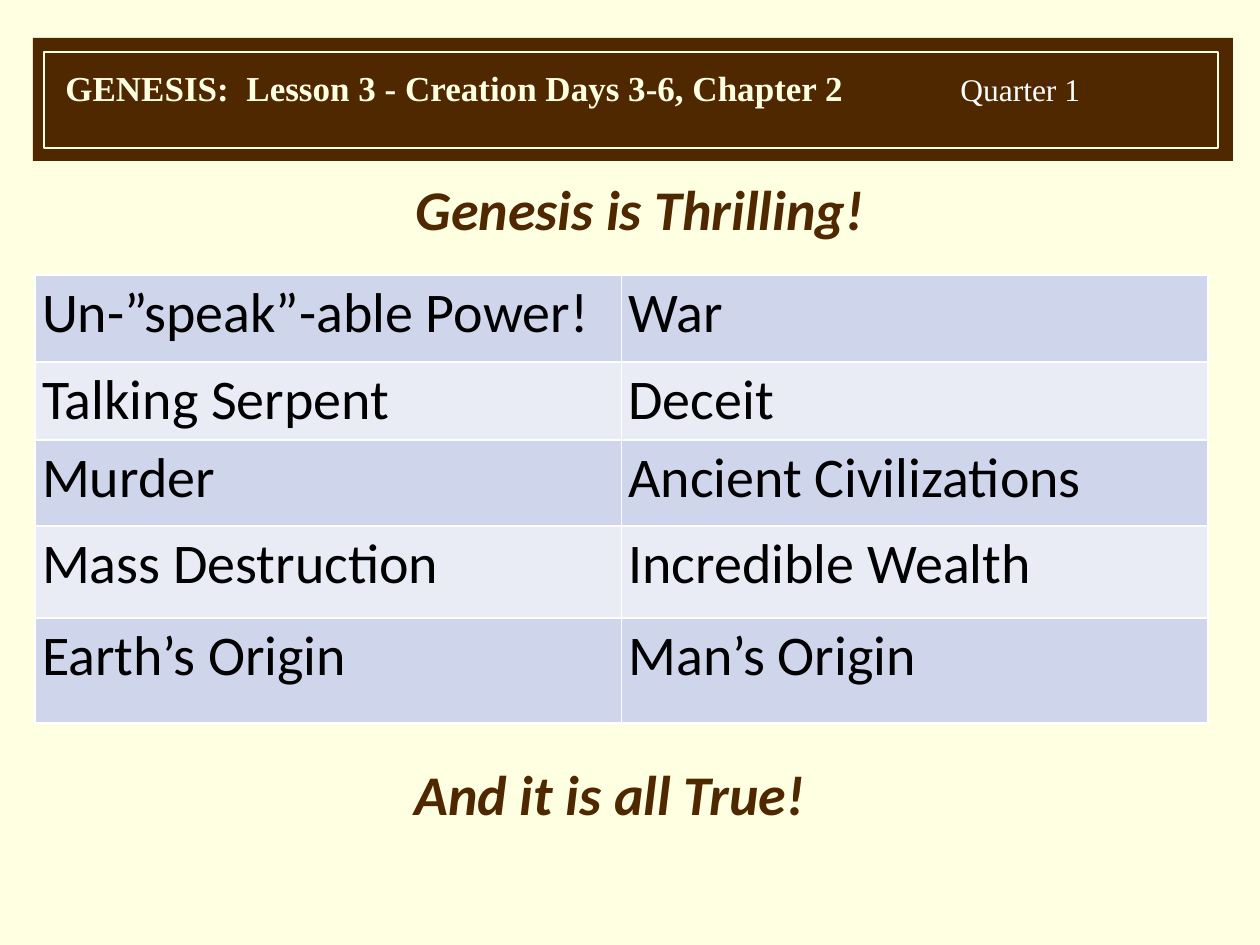
from lxml.etree import SubElement
from pptx import Presentation
from pptx.dml.color import RGBColor
from pptx.enum.shapes import MSO_SHAPE as SHAPE
from pptx.enum.text import MSO_ANCHOR as ANCHOR, MSO_AUTO_SIZE as AUTO, PP_ALIGN as ALIGN
from pptx.oxml.ns import qn
from pptx.util import Emu, Pt

CREAM = RGBColor(0xFF, 0xFF, 0xE1)
BROWN = RGBColor(0x50, 0x28, 0x00)
WHITE = RGBColor(0xFF, 0xFF, 0xFF)
BLACK = RGBColor(0x00, 0x00, 0x00)
BANDS = [RGBColor(0xCF, 0xD5, 0xEA), RGBColor(0xE9, 0xEB, 0xF5)]
PX = 914400 / 126


def px(*values):
    return [Emu(round(v * PX)) for v in values]


def write(tf, text, size=32, font="Calibri", color=BROWN, bold=False, italic=False,
          align=ALIGN.LEFT):
    p = tf.paragraphs[0]
    p.alignment = align
    r = p.add_run()
    r.text = text
    r.font.size = Pt(size)
    r.font.name = font
    r.font.color.rgb = color
    r.font.bold = bold
    r.font.italic = italic
    return p


prs = Presentation()
prs.slide_width, prs.slide_height = px(1260, 945)
s = prs.slides.add_slide(prs.slide_layouts[5])
s.background.fill.solid()
s.background.fill.fore_color.rgb = CREAM

# Title
title = s.shapes.title
title.left, title.top, title.width, title.height = px(35, 176, 1210, 740)
tf = title.text_frame
tf.auto_size = AUTO.NONE
tf.vertical_anchor = ANCHOR.TOP
p = write(tf, "Genesis is Thrilling!", bold=True, italic=True, align=ALIGN.CENTER)
p.line_spacing = 0.9
p.space_before = Pt(10)

# Header band with its inner frame
band = s.shapes.add_shape(SHAPE.RECTANGLE, *px(33, 38, 1200, 123))
band.shadow.inherit = False
band.fill.solid()
band.fill.fore_color.rgb = BROWN
band.line.fill.background()

frame = s.shapes.add_shape(SHAPE.RECTANGLE, *px(44, 52, 1174, 96))
frame.shadow.inherit = False
frame.fill.background()
frame.line.color.rgb = CREAM
frame.line.width = Pt(1)

# Header texts and closing line
SERIF = "Times New Roman"
texts = [
    ((53, 60, 1068, 55), "GENESIS:  Lesson 3 - Creation Days 3-6, Chapter 2",
     dict(size=20, font=SERIF, color=CREAM, bold=True)),
    ((948, 64, 195, 50), "Quarter 1", dict(size=18, font=SERIF, color=WHITE)),
    ((402, 753, 440, 81), "And it is all True!", dict(bold=True, italic=True)),
]
for box, text, style in texts:
    tf = s.shapes.add_textbox(*px(*box)).text_frame
    tf.word_wrap = True
    write(tf, text, **style)

# Topic tables: the last row is a table of its own
tables = [
    (275, [87, 78, 86, 98], [("Un-”speak”-able Power!", "War"),
                             ("Talking Serpent", "Deceit"),
                             ("Murder", "Ancient Civilizations"),
                             ("Mass Destruction", "Incredible Wealth")]),
    (618, [105], [("Earth’s Origin", "Man’s Origin")]),
]
for top, heights, rows in tables:
    table = s.shapes.add_table(len(rows), 2, *px(35, top, 1173, sum(heights))).table
    table.first_row = table.horz_banding = False
    for col in table.columns:
        col.width, = px(586.5)
    for i, (height, row) in enumerate(zip(heights, rows)):
        table.rows[i].height, = px(height)
        for j, text in enumerate(row):
            cell = table.cell(i, j)
            cell.margin_left, cell.margin_right = px(7, 7)
            cell.margin_top, cell.margin_bottom = px(4, 4)
            write(cell.text_frame, text, color=BLACK)
            # Borders come before the fill in the cell properties
            tc_pr = cell._tc.get_or_add_tcPr()
            for side in ("a:lnL", "a:lnR", "a:lnT", "a:lnB"):
                ln = SubElement(tc_pr, qn(side), w=str(Pt(1)))
                SubElement(SubElement(ln, qn("a:solidFill")), qn("a:srgbClr"), val=str(WHITE))
            cell.fill.solid()
            cell.fill.fore_color.rgb = BANDS[i % 2]

prs.save("out.pptx")
